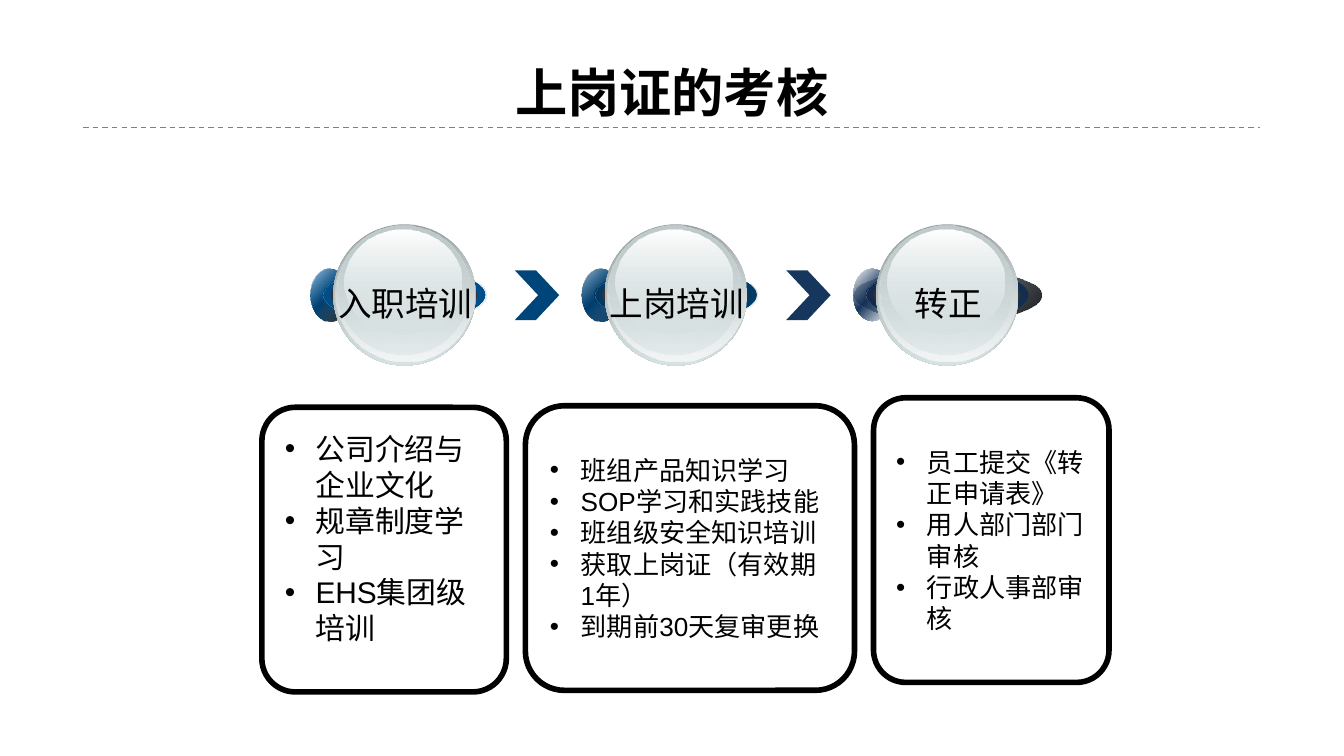
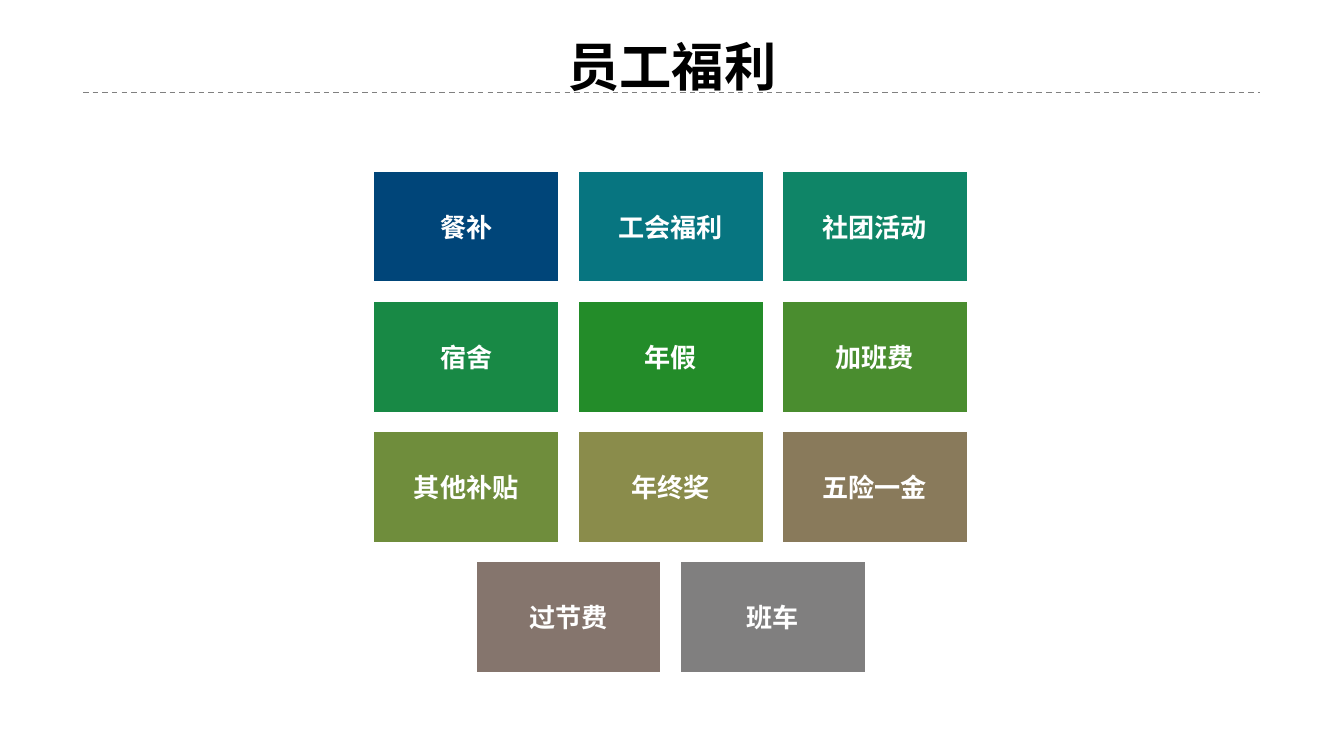
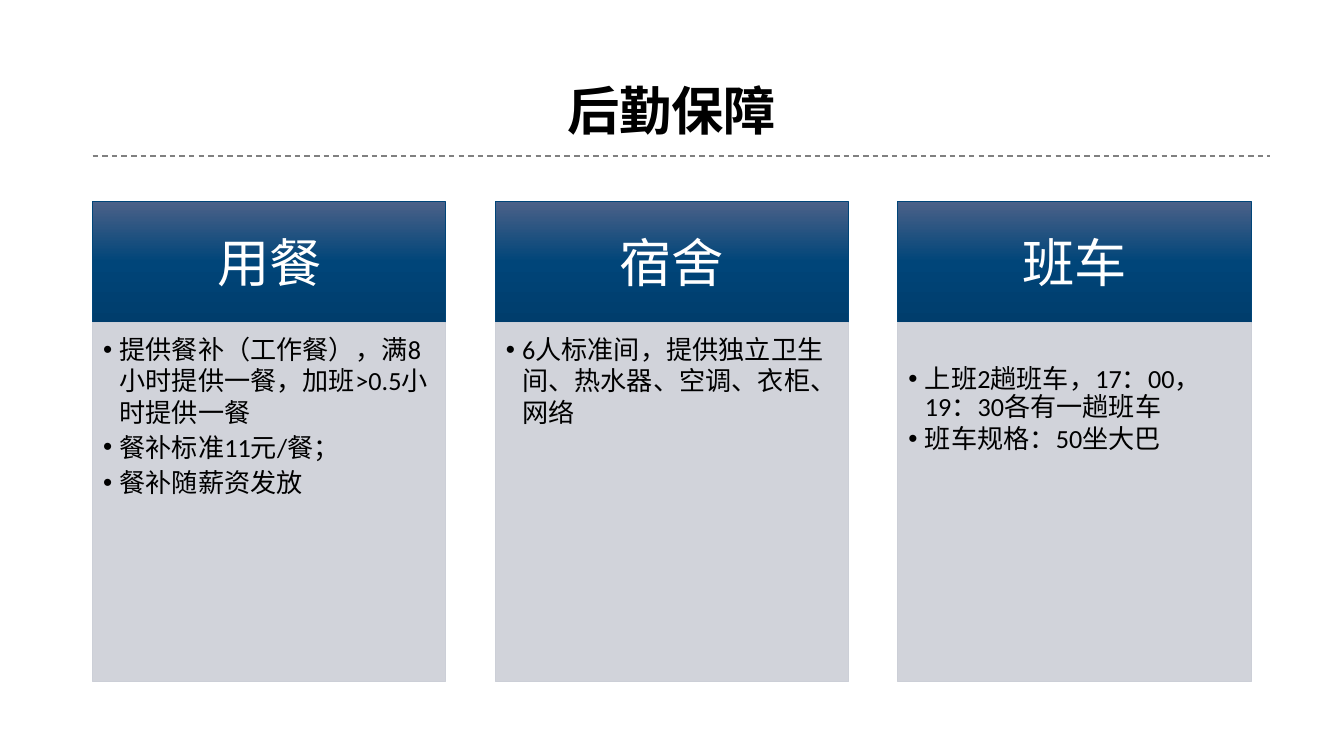
from lxml.etree import SubElement
from pptx import Presentation
from pptx.dml.color import RGBColor
from pptx.enum.dml import MSO_LINE
from pptx.enum.shapes import MSO_CONNECTOR, MSO_SHAPE as Preset
from pptx.enum.text import MSO_ANCHOR as Anchor, MSO_AUTO_SIZE, PP_ALIGN as Align
from pptx.oxml.ns import qn
from pptx.util import Cm, Pt

rgb = RGBColor.from_string
CJK_FONT = "Noto Sans CJK SC"
BLACK, WHITE, NAVY, GREY = "000000", "FFFFFF", "004579", "808080"
PANEL = "CCCFD7"


def add_shape(slide, preset, box, stops=(), angle=270, line=None, width=1):
    """Add a shape; stops are (position, colour, opacity), one for a flat fill, none for no fill."""
    shape = slide.shapes.add_shape(preset, *map(Cm, box))
    shape.shadow.inherit = False
    if not stops:
        shape.fill.background()
    elif len(stops) == 1:
        shape.fill.solid()
        shape.fill.fore_color.rgb = rgb(stops[0][1])
        color = shape._element.spPr.find(qn("a:solidFill"))[0]
        SubElement(color, qn("a:alpha"), val=str(stops[0][2] * 1000))
    else:
        shape.fill.gradient()
        shape.fill.gradient_angle = angle
        stop_list = shape._element.spPr.find(qn("a:gradFill")).find(qn("a:gsLst"))
        for default_stop in list(stop_list):
            stop_list.remove(default_stop)
        for position, hex_color, opacity in stops:
            stop = SubElement(stop_list, qn("a:gs"), pos=str(position * 1000))
            color = SubElement(stop, qn("a:srgbClr"), val=hex_color)
            SubElement(color, qn("a:alpha"), val=str(opacity * 1000))
    if line:
        shape.line.color.rgb = rgb(line)
        shape.line.width = Pt(width)
    else:
        shape.line.fill.background()
    return shape


def write(frame, lines, size, color=BLACK, font="Calibri", bold=False, align=Align.CENTER,
          anchor=Anchor.MIDDLE, margins=(0.25, 0.13, 0.25, 0.13), indent=0, spacing=1, after=0,
          wrap=True):
    """Write one paragraph per line; a positive indent makes them bullets."""
    frame.text = "\n".join(lines)
    frame.auto_size = MSO_AUTO_SIZE.NONE
    frame.word_wrap = wrap
    frame.vertical_anchor = anchor
    (frame.margin_left, frame.margin_top,
     frame.margin_right, frame.margin_bottom) = map(Cm, margins)
    for paragraph in frame.paragraphs:
        if indent:
            properties = paragraph._p.get_or_add_pPr()
            properties.set("marL", str(Cm(indent)))
            properties.set("indent", str(-Cm(indent)))
            SubElement(properties, qn("a:buFont"), typeface="Arial")
            SubElement(properties, qn("a:buChar"), char="•")
        paragraph.alignment = align
        paragraph.line_spacing = spacing
        paragraph.space_before = Pt(0)
        paragraph.space_after = Pt(after)
        for run in paragraph.runs:
            run.font.size = Pt(size)
            run.font.bold = bold
            run.font.name = font
            run.font.color.rgb = rgb(color)
            SubElement(run._r.get_or_add_rPr(), qn("a:ea"), typeface=CJK_FONT)


prs = Presentation()
prs.slide_width, prs.slide_height = Cm(25.4), Cm(14.29)

# Titles and the dashed rules under them
RULE_LENGTH = 22.25
headings = [
    ("上岗证的考核", (1.75, 0.43, 21.89, 2.77), 1.57, 2.41),
    ("员工福利", (7.44, 0.61, 10.52, 1.4), 1.57, 1.75),
    ("后勤保障", (1.75, 0.76, 21.89, 2.77), 1.75, 2.95),
]
slides = []
for heading, box, rule_left, rule_top in headings:
    slide = prs.slides.add_slide(prs.slide_layouts[5])
    title = slide.shapes.title
    title.left, title.top, title.width, title.height = map(Cm, box)
    write(title.text_frame, [heading], 28, font=CJK_FONT, bold=True,
          margins=(0.18, 0.1, 0.18, 0.1), spacing=0.9)
    rule = slide.shapes.add_connector(MSO_CONNECTOR.STRAIGHT, Cm(rule_left), Cm(rule_top),
                                      Cm(rule_left + RULE_LENGTH), Cm(rule_top))
    rule.line.color.rgb = rgb(GREY)
    rule.line.width = Pt(0.75)
    rule.line.dash_style = MSO_LINE.DASH
    SubElement(rule._element.spPr, qn("a:effectLst"))
    slides.append(slide)
certificate, benefits, logistics = slides

# Slide 1: three stages and what each includes
steps = [
    ((4.95, 7.7, 4.62, 5.38), 16, 0.56, ["公司介绍与企业文化", "规章制度学习", "EHS集团级培训"]),
    ((9.93, 7.67, 6.22, 5.38), 14, 0.13,
     ["班组产品知识学习", "SOP学习和实践技能", "班组级安全知识培训",
      "获取上岗证（有效期1年）", "到期前30天复审更换"]),
    ((16.51, 7.52, 4.45, 5.38), 14, 0.13,
     ["员工提交《转正申请表》", "用人部门部门审核", "行政人事部审核"]),
]
for box, size, bottom, lines in steps:
    card = add_shape(certificate, Preset.ROUNDED_RECTANGLE, box, line=BLACK, width=3)
    card.adjustments[0] = 0.137
    write(card.text_frame, lines, size, font="Arial", align=Align.LEFT,
          margins=(0.25, 0.13, 0.25, bottom), indent=0.58)

STAGE_LEFT, STAGE_PITCH, RING_TOP, RING_HEIGHT = 5.87, 5.13, 5.08, 0.99
# name, base, deep and soft tones, end of the shade, shade width, colour of the next arrow
stages = [
    ("入职培训", "005DA2", "00477C", "004C85", (100, BLACK, 90), 0.71, NAVY),
    ("上岗培训", NAVY, "00355D", "003963", (100, "003157", 100), 0.71, "17365D"),
    ("转正", "17365D", "122947", "132C4C", (100, BLACK, 90), 3.56, None),
]
# offset from the stage's left, top, width, height, gradient from top to bottom
ball_layers = [
    (0.43, 4.24, 2.69, 2.67, [(0, "99A1A2", 100), (100, "D6E1E2", 100)]),
    (0.48, 4.24, 2.62, 2.59, [(0, "D6E1E2", 0), (100, "F2F5F5", 100)]),
    (0.51, 4.27, 2.49, 2.44, [(0, "C1CBCC", 100), (100, "D6E1E2", 48)]),
    (0.64, 4.34, 2.21, 1.98, [(0, WHITE, 100), (100, "D6E1E2", 38)]),
]
for index, (name, base, deep, soft, shade_end, shade_width, arrow) in enumerate(stages):
    left = STAGE_LEFT + index * STAGE_PITCH
    if arrow:
        chevron = add_shape(certificate, Preset.CHEVRON, (left + 3.86, 5.11, 0.84, 0.94),
                            [(0, arrow, 100)])
        chevron.adjustments[0] = 0.525
    ring_layers = [
        (0, 0.71, 315, [(0, WHITE, 100), (50, base, 100), (100, WHITE, 100)]),
        (0, shade_width, 315, [(0, base, 32), shade_end]),
        (0.23, 3.07, 45, [(0, deep, 100), (50, base, 100), (100, deep, 100)]),
        (0.25, 3.07, 315, [(0, soft, 100), (100, base, 0)]),
        (0.38, 2.77, 0, [(0, "333333", 100)]),
    ]
    for offset, width, angle, stops in ring_layers:
        add_shape(certificate, Preset.OVAL, (left + offset, RING_TOP, width, RING_HEIGHT),
                  stops, angle)
    for offset, top, width, height, stops in ball_layers:
        add_shape(certificate, Preset.OVAL, (left + offset, top, width, height), stops)
    label_width = 0.53 + 0.635 * len(name)
    label = certificate.shapes.add_textbox(Cm(left + 1.79 - label_width / 2), Cm(5.21),
                                           Cm(label_width), Cm(1.02))
    write(label.text_frame, [name], 18, anchor=Anchor.TOP, wrap=False)

# Slide 2: benefit tiles, each row centred
TILE_WIDTH, TILE_HEIGHT, TILE_PITCH, ROW_PITCH = 3.51, 2.11, 3.86, 2.46
benefit_rows = [
    [("餐补", NAVY), ("工会福利", "077580"), ("社团活动", "0F8567")],
    [("宿舍", "188945"), ("年假", "238C29"), ("加班费", "4A8D2F")],
    [("其他补贴", "6F8D3C"), ("年终奖", "8A8C4B"), ("五险一金", "897A5B")],
    [("过节费", "85756D"), ("班车", "807F7F")],
]
for row, tiles in enumerate(benefit_rows):
    row_left = 7.06 + (3 - len(tiles)) * TILE_PITCH / 2
    for column, (benefit, color) in enumerate(tiles):
        tile = add_shape(benefits, Preset.RECTANGLE,
                         (row_left + column * TILE_PITCH, 3.23 + row * ROW_PITCH,
                          TILE_WIDTH, TILE_HEIGHT), [(0, color, 100)], line=WHITE)
        write(tile.text_frame, [benefit], 14, WHITE, bold=True, margins=[0.15] * 4)

# Slide 3: three columns, a heading over a list
COLUMN_WIDTH, COLUMN_PITCH = 6.68, 7.61
services = [
    ("用餐", 0.2, 1, ["提供餐补（工作餐），满8小时提供一餐，加班>0.5小时提供一餐",
                    "餐补标准11元/餐；", "餐补随薪资发放"]),
    ("宿舍", 0.2, 1, ["6人标准间，提供独立卫生间、热水器、空调、衣柜、网络"]),
    ("班车", 0.82, 0.9, ["上班2趟班车，17：00，19：30各有一趟班车", "班车规格：50坐大巴"]),
]
for index, (service, top_margin, spacing, details) in enumerate(services):
    left = 1.75 + index * COLUMN_PITCH
    header = add_shape(logistics, Preset.RECTANGLE, (left, 3.81, COLUMN_WIDTH, 2.29),
                       [(0, "4B6188", 100), (50, NAVY, 100), (100, "003D6C", 100)],
                       line=NAVY, width=0.5)
    write(header.text_frame, [service], 28, WHITE, margins=(0.56, 0.3, 0.56, 0.3))
    panel = add_shape(logistics, Preset.RECTANGLE, (left, 6.1, COLUMN_WIDTH, 6.78),
                      [(0, PANEL, 90)], line=PANEL, width=0.5)
    write(panel.text_frame, details, 14, align=Align.LEFT, anchor=Anchor.TOP,
          margins=(0.2, top_margin, 0.28, 0.3), indent=0.31, spacing=spacing, after=2)

prs.save("out.pptx")
